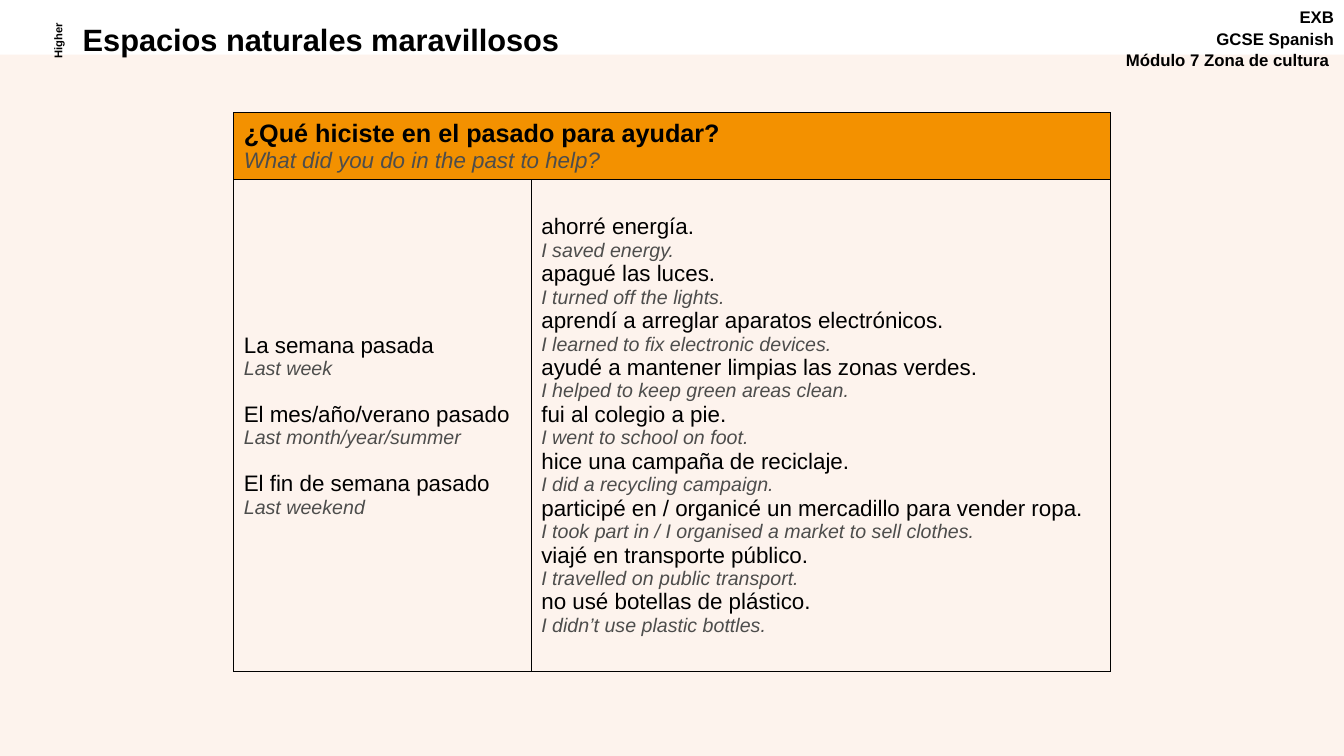
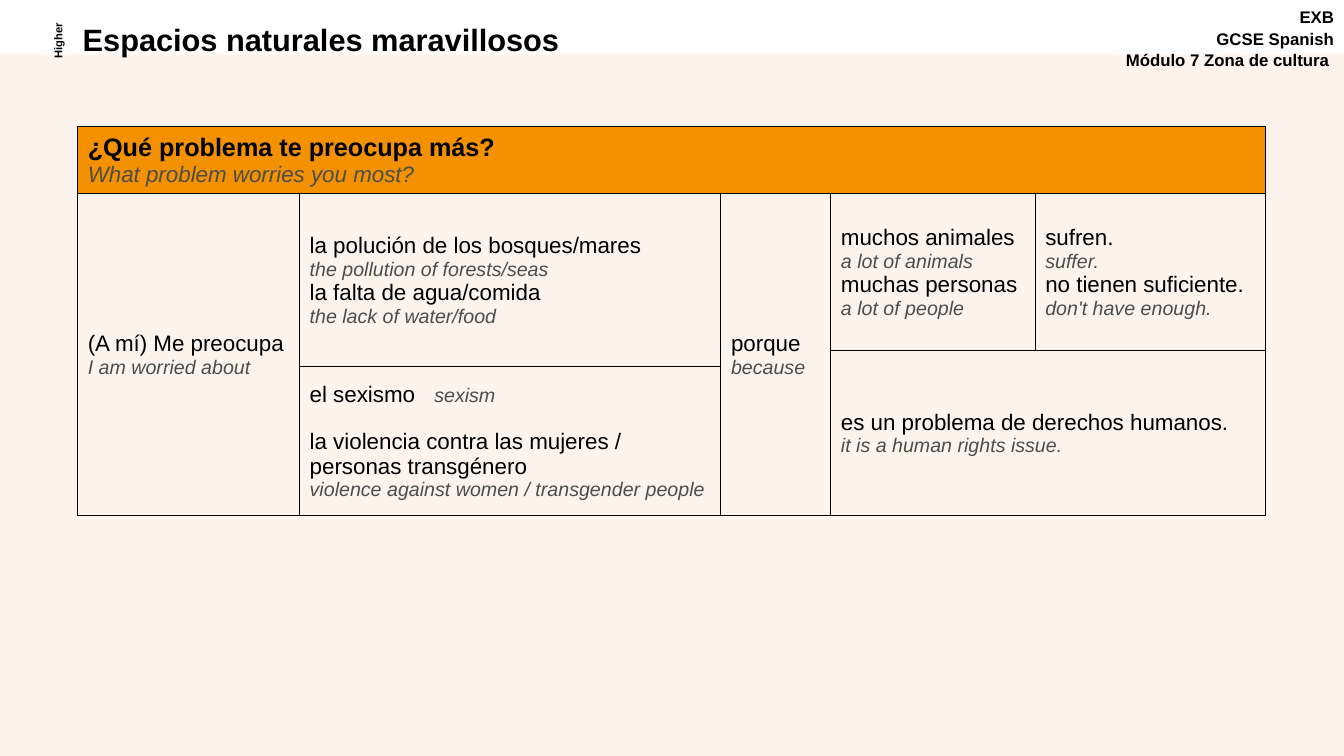
from lxml.etree import SubElement
from pptx import Presentation
from pptx.dml.color import RGBColor
from pptx.enum.shapes import MSO_SHAPE as Shape
from pptx.enum.text import MSO_ANCHOR as Anchor, PP_ALIGN as Align
from pptx.oxml.ns import qn
from pptx.util import Pt

# Shared style
FONT = "Arial"
BLACK, GREY = "000000", "4D4D4C"
CREAM, ORANGE = "FDF3ED", "F39100"
WIDE, HIGH = 960, 540
BAND = 39          # height of the white strip at the top
BLANK = 16         # gap that sets phrases apart
LINE = 0.75        # table rule


def paint(fill, code):
    fill.solid()
    fill.fore_color.rgb = RGBColor.from_string(code)


def style(run, size, color=BLACK, bold=False, slant=False):
    font = run.font
    font.name, font.size = FONT, Pt(size)
    font.bold, font.italic = bold, slant
    font.color.rgb = RGBColor.from_string(color)


def label(slide, box, text, size, align=Align.LEFT):
    shape = slide.shapes.add_textbox(*map(Pt, box))
    frame = shape.text_frame
    frame.word_wrap = True
    frame.text = text
    for para in frame.paragraphs:
        para.alignment = align
        for run in para.runs:
            style(run, size, bold=True)
    return shape


# Band, course, title and tier on every slide
def page(deck, title):
    slide = deck.slides.add_slide(deck.slide_layouts[6])
    body = slide.shapes.add_shape(
        Shape.RECTANGLE, 0, Pt(BAND), Pt(WIDE), Pt(HIGH - BAND))
    body.shadow.inherit = False
    paint(body.fill, CREAM)
    body.line.fill.background()

    course = label(slide, (791.5, 1.5, 168.5, 55),
                   "EXB\nGCSE Spanish\nMódulo 7 Zona de cultura ",
                   12, Align.RIGHT)
    for para in course.text_frame.paragraphs:
        para.space_after = Pt(0.8)

    head = label(slide, (52, 14, 614, 31), title, 22)
    head.text_frame.paragraphs[0].line_spacing = 0.9
    tier = label(slide, (13, 21, 56, 16), "Higher", 8, Align.CENTER)
    tier.rotation = 270
    return slide


# Table cells
def rule(cell):
    props = cell._tc.get_or_add_tcPr()
    for side in ("lnL", "lnR", "lnT", "lnB"):
        line = SubElement(props, qn("a:" + side), w=str(Pt(LINE)))
        fill = SubElement(line, qn("a:solidFill"))
        SubElement(fill, qn("a:srgbClr"), val=BLACK)


def write(cell, pairs, big=16, small=14, bold=False, gap=0):
    """Write Spanish lines, each with its English below."""
    cell.vertical_anchor = Anchor.MIDDLE
    frame = cell.text_frame
    frame.text = "\n".join(line for pair in pairs for line in pair)
    for num, para in enumerate(frame.paragraphs):
        if num % 2:
            style(para.runs[0], small, GREY, slant=True)
        else:
            style(para.runs[0], big, bold=bold)
            if num:
                para.space_before = Pt(gap)


def lead(cell, words, gloss, stop):
    """Put a phrase and its English on one line above the rest."""
    first = cell.text_frame.paragraphs[0]
    new = cell.text_frame.add_paragraph()
    first._p.addprevious(new._p)
    props = new._p.get_or_add_pPr()
    tabs = SubElement(props, qn("a:tabLst"))
    SubElement(tabs, qn("a:tab"), pos=str(Pt(stop)), algn="l")
    for text, size, color in ((words + "\t", 16, BLACK), (gloss, 14, GREY)):
        run = new.add_run()
        run.text = text
        style(run, size, color, slant=color == GREY)
    first.space_before = Pt(BLANK)


def grid(slide, spot, cols, rows, head, spans=()):
    """Ruled table with an orange question row; spans are cell corners."""
    size = sum(cols), sum(rows)
    frame = slide.shapes.add_table(
        len(rows), len(cols), *map(Pt, spot + size))
    table = frame.table
    table.first_row = table.horz_banding = False
    for col, width in zip(table.columns, cols):
        col.width = Pt(width)
    for row, height in zip(table.rows, rows):
        row.height = Pt(height)
    for num, row in enumerate(table.rows):
        for cell in row.cells:
            rule(cell)
            if num:
                cell.fill.background()
            else:
                paint(cell.fill, ORANGE)
    for start, end in (((0, 0), (0, len(cols) - 1)), *spans):
        table.cell(*start).merge(table.cell(*end))
    write(table.cell(0, 0), [head], 18, 16, bold=True)
    return table


# Slide 1: what you did to help
def past(deck, title):
    table = grid(page(deck, title), (167, 80.5), (212.5, 414), (44, 351),
                 ("¿Qué hiciste en el pasado para ayudar?",
                  "What did you do in the past to help?"))
    write(table.cell(1, 0), [
        ("La semana pasada", "Last week"),
        ("El mes/año/verano pasado", "Last month/year/summer"),
        ("El fin de semana pasado", "Last weekend"),
    ], gap=BLANK)
    write(table.cell(1, 1), [
        ("ahorré energía.", "I saved energy."),
        ("apagué las luces.", "I turned off the lights."),
        ("aprendí a arreglar aparatos electrónicos.",
         "I learned to fix electronic devices."),
        ("ayudé a mantener limpias las zonas verdes.",
         "I helped to keep green areas clean."),
        ("fui al colegio a pie.", "I went to school on foot."),
        ("hice una campaña de reciclaje.", "I did a recycling campaign."),
        ("participé en / organicé un mercadillo para vender ropa.",
         "I took part in / I organised a market to sell clothes."),
        ("viajé en transporte público.", "I travelled on public transport."),
        ("no usé botellas de plástico.", "I didn’t use plastic bottles."),
    ])


# Slide 2: what worries you
def worry(deck, title):
    table = grid(page(deck, title), (55.5, 90.5),
                 (158.5, 301, 78.5, 146, 164.5), (44, 112, 11.5, 106.5),
                 ("¿Qué problema te preocupa más?",
                  "What problem worries you most?"),
                 (((1, 0), (3, 0)), ((1, 1), (2, 1)),
                  ((1, 2), (3, 2)), ((2, 3), (3, 4))))
    cells = {
        (1, 0): [("(A mí) Me preocupa", "I am worried about")],
        (1, 1): [("la polución de los bosques/mares",
                  "the pollution of forests/seas"),
                 ("la falta de agua/comida", "the lack of water/food")],
        (1, 2): [("porque", "because")],
        (1, 3): [("muchos animales", "a lot of animals"),
                 ("muchas personas", "a lot of people")],
        (1, 4): [("sufren.", "suffer."),
                 ("no tienen suficiente.", "don't have enough.")],
        (2, 3): [("es un problema de derechos humanos.",
                  "it is a human rights issue.")],
        (3, 1): [("la violencia contra las mujeres / personas transgénero",
                  "violence against women / transgender people")],
    }
    for place, pairs in cells.items():
        write(table.cell(*place), pairs)
    lead(table.cell(3, 1), "el sexismo", "sexism", 89)


def main():
    deck = Presentation()
    deck.slide_width, deck.slide_height = Pt(WIDE), Pt(HIGH)
    for build in (past, worry):
        build(deck, "Espacios naturales maravillosos")
    deck.save("out.pptx")


if __name__ == "__main__":
    main()
